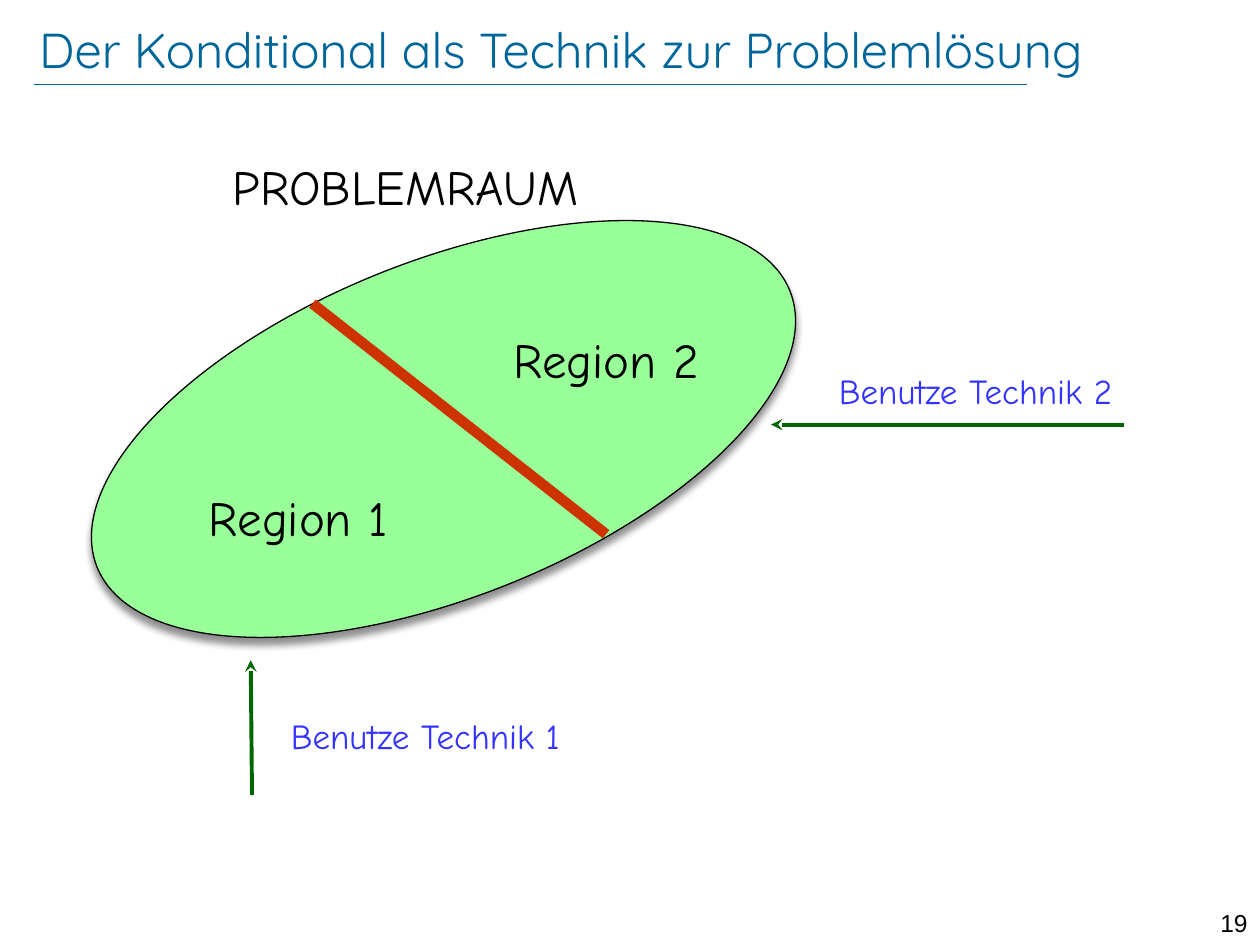
from dataclasses import dataclass

from lxml.etree import SubElement
from pptx import Presentation
from pptx.dml.color import RGBColor
from pptx.enum.shapes import MSO_CONNECTOR as Connector, MSO_SHAPE as Shape
from pptx.enum.text import MSO_ANCHOR as Anchor, MSO_AUTO_SIZE as AutoSize, PP_ALIGN as Align
from pptx.oxml.ns import qn
from pptx.util import Inches, Pt

COLUMNS, ROWS = 100, 75
HAND_FONT = "Comic Neue"
BLACK, TITLE_BLUE, LABEL_BLUE = "000000", "006699", "3333FF"
GREEN, ARROW_GREEN, RED = "99FF99", "006600", "CC3300"


@dataclass(frozen=True)
class Label:
    text: str
    column: float
    row: float
    columns: float
    rows: float
    size: int = 28
    color: str = BLACK
    font: str = HAND_FONT
    align: Align = Align.LEFT


@dataclass(frozen=True)
class Stroke:
    start: tuple[float, float]
    end: tuple[float, float]
    color: str
    weight: float
    arrow: bool = False


RULE = Stroke((2.7, 6.7), (81.5, 6.7), TITLE_BLUE, 0.25)
DIVIDER = Stroke((24.8, 24.1), (48.1, 42.4), RED, 6)
ARROWS = (
    Stroke((20, 63.1), (19.9, 52.4), ARROW_GREEN, 2.25, True),
    Stroke((89.2, 33.7), (61.2, 33.7), ARROW_GREEN, 2.25, True),
)
TITLE = Label("Der Konditional als Technik zur Problemlösung", 3.1, 1.3, 96.1, 5.2,
              color=TITLE_BLUE, font="Quicksand")
LABELS = (
    Label("Region 1", 15.6, 38.2, 18.8, 5.7),
    Label("Region 2", 39.8, 25.7, 18.6, 5.7),
    Label("PROBLEMRAUM", 17.5, 11.9, 34, 5.7),
    Label("Benutze Technik 1", 22.1, 56.2, 29.2, 4.3, 20, LABEL_BLUE),
    Label("Benutze Technik 2", 65.6, 28.8, 26.7, 4.4, 20, LABEL_BLUE),
    Label("19", 94.5, 71.6, 5.5, 2.4, 14, font="Arial", align=Align.RIGHT),
)

prs = Presentation()
prs.slide_width, prs.slide_height = Inches(10), Inches(7.5)
slide = prs.slides.add_slide(prs.slide_layouts[5])


def x(column: float) -> int:
    return round(prs.slide_width * column / COLUMNS)


def y(row: float) -> int:
    return round(prs.slide_height * row / ROWS)


def rgb(color: str) -> RGBColor:
    return RGBColor.from_string(color)


def write(frame, label: Label) -> None:
    frame.word_wrap = True
    frame.text = label.text
    paragraph = frame.paragraphs[0]
    paragraph.alignment = label.align
    font = paragraph.runs[0].font
    font.name, font.size = label.font, Pt(label.size)
    font.color.rgb = rgb(label.color)


def draw_title(label: Label) -> None:
    title = slide.shapes.title
    title.left, title.top = x(label.column), y(label.row)
    title.width, title.height = x(label.columns), y(label.rows)
    frame = title.text_frame
    frame.margin_left = frame.margin_right = frame.margin_top = frame.margin_bottom = 0
    frame.vertical_anchor = Anchor.MIDDLE
    frame.auto_size = AutoSize.NONE
    write(frame, label)


def draw_label(label: Label) -> None:
    box = slide.shapes.add_textbox(x(label.column), y(label.row), x(label.columns), y(label.rows))
    write(box.text_frame, label)


def draw_stroke(stroke: Stroke) -> None:
    (x1, y1), (x2, y2) = stroke.start, stroke.end
    line = slide.shapes.add_connector(Connector.STRAIGHT, x(x1), y(y1), x(x2), y(y2))
    line.line.color.rgb = rgb(stroke.color)
    line.line.width = Pt(stroke.weight)
    properties = line._element.spPr
    if stroke.arrow:
        SubElement(properties.find(qn("a:ln")), qn("a:tailEnd"), type="stealth")
    SubElement(properties, qn("a:effectLst"))


def draw_problem_space() -> None:
    ellipse = slide.shapes.add_shape(Shape.OVAL, x(5.6), y(20.7), x(59.2), y(26.7))
    ellipse.rotation = 338.3
    ellipse.fill.solid()
    ellipse.fill.fore_color.rgb = rgb(GREEN)
    ellipse.line.color.rgb = rgb(BLACK)
    ellipse.line.width = Pt(0.75)
    ellipse.shadow.inherit = False
    effects = ellipse._element.spPr.find(qn("a:effectLst"))
    shadow = SubElement(effects, qn("a:outerShdw"), blurRad=str(int(Pt(4))), dist=str(int(Pt(4))),
                        dir=str(90 * 60000), rotWithShape="0")
    shade = SubElement(shadow, qn("a:srgbClr"), val=BLACK)
    SubElement(shade, qn("a:alpha"), val="43000")


draw_stroke(RULE)
draw_title(TITLE)
draw_problem_space()
draw_stroke(DIVIDER)
for label in LABELS:
    draw_label(label)
for arrow in ARROWS:
    draw_stroke(arrow)

prs.save("out.pptx")
